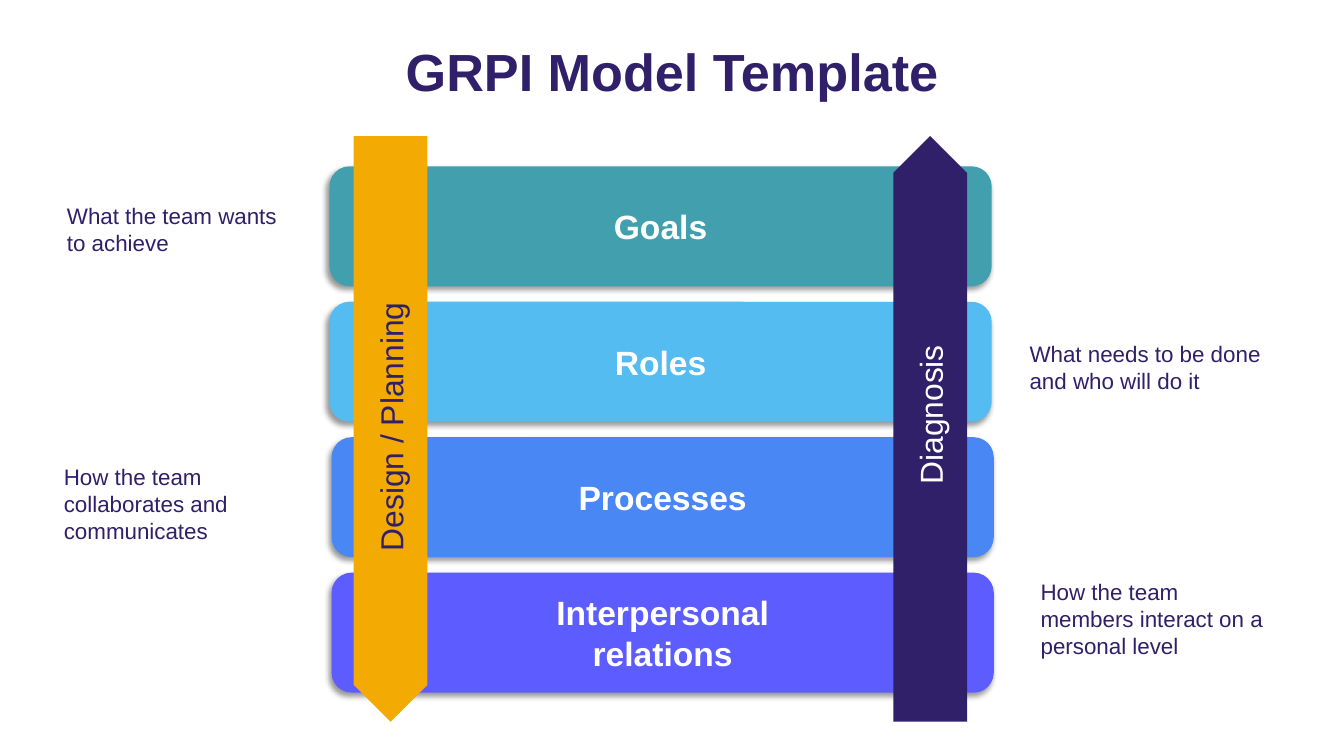
"""Build the GRPI model slide: four layers, two direction arrows and side notes."""
from lxml.etree import SubElement
from pptx import Presentation
from pptx.dml.color import RGBColor
from pptx.enum.shapes import MSO_SHAPE
from pptx.enum.text import MSO_ANCHOR, PP_ALIGN
from pptx.oxml.ns import qn
from pptx.util import Pt

COLORS = {
    "navy": "30206A", "white": "FFFFFF", "amber": "F3AA02", "teal": "42A0AE",
    "sky": "54BCF0", "blue": "4987F5", "violet": "5D5CFF", "shadow": "000000",
}


def add_block(kind, left, top, width, height, color):
    block = slide.shapes.add_shape(kind, Pt(left), Pt(top), Pt(width), Pt(height))
    block.shadow.inherit = False
    block.fill.solid()
    block.fill.fore_color.rgb = RGBColor.from_string(COLORS[color])
    block.line.fill.background()
    return block


def write(holder, lines, size, color, bold=False, align=PP_ALIGN.CENTER, anchor=MSO_ANCHOR.MIDDLE):
    frame = holder.text_frame
    frame.word_wrap = True
    frame.vertical_anchor = anchor
    frame.margin_left = frame.margin_right = Pt(9.6)
    frame.margin_top = frame.margin_bottom = Pt(9.6)
    for index, line in enumerate(lines):
        paragraph = frame.add_paragraph() if index else frame.paragraphs[0]
        paragraph.alignment = align
        run = paragraph.add_run()
        run.text = line
        run.font.name = "Arial"
        run.font.size = Pt(size)
        run.font.bold = bold
        run.font.color.rgb = RGBColor.from_string(COLORS[color])


presentation = Presentation()
presentation.slide_width, presentation.slide_height = Pt(960), Pt(540)
slide = presentation.slides.add_slide(presentation.slide_layouts[6])

title = slide.shapes.add_textbox(Pt(74.9), Pt(25.2), Pt(810.7), Pt(50.4))
write(title, ["GRPI Model Template"], 37.3, "navy", bold=True)

layers = [
    (["Goals"], 235.4, "teal"),
    (["Roles"], 235.4, "sky"),
    (["Processes"], 236.9, "blue"),
    (["Interpersonal", "relations"], 236.9, "violet"),
]
for row, (lines, left, color) in enumerate(layers):
    layer = add_block(MSO_SHAPE.ROUNDED_RECTANGLE, left, 118.8 + 96.75 * row, 473, 85.7, color)
    effects = layer._element.spPr.find(qn("a:effectLst"))
    shadow = SubElement(effects, qn("a:outerShdw"), blurRad=str(Pt(4)), dist=str(Pt(3)),
                        dir=str(135 * 60000), algn="ctr", rotWithShape="0")
    shade = SubElement(shadow, qn("a:srgbClr"), val=COLORS["shadow"])
    SubElement(shade, qn("a:alpha"), val="40000")
    write(layer, lines, 24, "white", bold=True)

notes = [
    ("What the team wants to achieve", 38.2, 134.6, 50.4),
    ("What needs to be done and who will do it", 725.8, 233.3, 50.4),
    ("How the team collaborates and communicates", 36, 321.1, 68.4),
    ("How the team members interact on a personal level", 733.7, 403.2, 68.4),
]
for wording, left, top, height in notes:
    note = slide.shapes.add_textbox(Pt(left), Pt(top), Pt(185.8), Pt(height))
    write(note, [wording], 16, "navy", align=PP_ALIGN.LEFT, anchor=MSO_ANCHOR.TOP)

directions = [
    ("Design / Planning", 279, 304.9, 90, "amber", "navy"),
    ("Diagnosis", 664.4, 296.3, 270, "navy", "white"),
]
for wording, center, label_middle, rotation, color, text_color in directions:
    arrow = add_block(MSO_SHAPE.PENTAGON, center - 209.15, 280, 418.3, 52.7, color)
    arrow.rotation = rotation
    label = slide.shapes.add_textbox(Pt(center - 190), Pt(label_middle - 17.65), Pt(380), Pt(35.3))
    label.rotation = 270
    write(label, [wording], 22.7, text_color)

presentation.save("out.pptx")
